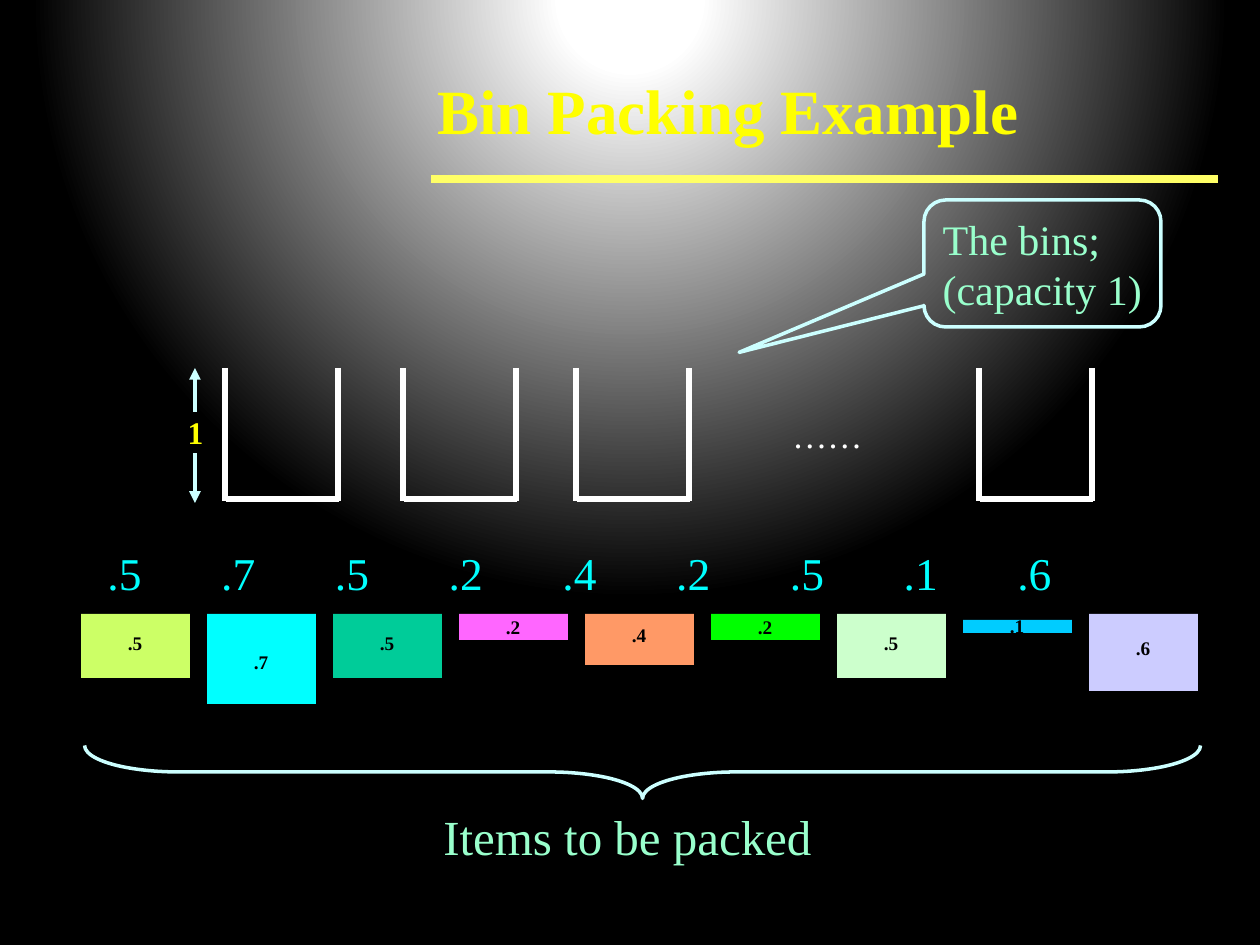
from dataclasses import dataclass

from lxml import etree
from pptx import Presentation
from pptx.dml.color import RGBColor
from pptx.enum.shapes import MSO_CONNECTOR, MSO_SHAPE
from pptx.enum.text import MSO_ANCHOR, PP_ALIGN
from pptx.oxml.ns import qn
from pptx.util import Pt

STRAIGHT = MSO_CONNECTOR.STRAIGHT
RECTANGLE = MSO_SHAPE.RECTANGLE
BRACE = MSO_SHAPE.RIGHT_BRACE
CALLOUT = MSO_SHAPE.ROUNDED_RECTANGULAR_CALLOUT
LEFT, CENTER = PP_ALIGN.LEFT, PP_ALIGN.CENTER
TOP, MIDDLE = MSO_ANCHOR.TOP, MSO_ANCHOR.MIDDLE
EMU_PER_PX = 914400 / 126
TITLE_ONLY = 5


@dataclass(frozen=True)
class Theme:
    font: str = "Times New Roman"
    title: str = "FFFF00"
    rule: str = "FFFF66"
    bin: str = "FFFFFF"
    outline: str = "CCFFFF"
    caption: str = "99FFCC"
    number: str = "00FFFF"
    label: str = "000000"
    glow: tuple = ((0, "FFFFFF"), (9, "FFFFFF"), (76, "000000"), (100, "000000"))
    title_size: int = 36
    caption_size: int = 28
    number_size: int = 26
    callout_size: int = 24
    dots_size: int = 20
    capacity_size: int = 18
    label_size: int = 11


def px(*lengths):
    return [round(length * EMU_PER_PX) for length in lengths]


def write_text(shape, text, *, font, size, color, bold=False, align=LEFT,
               anchor=TOP, wrap=False, spacing=None, tabs=()):
    frame = shape.text_frame
    frame.word_wrap = wrap
    frame.vertical_anchor = anchor
    for index, line in enumerate(text.split("\n")):
        paragraph = frame.add_paragraph() if index else frame.paragraphs[0]
        paragraph.alignment = align
        if spacing:
            paragraph.line_spacing = spacing
        if tabs:
            tab_list = etree.SubElement(paragraph._p.get_or_add_pPr(), qn("a:tabLst"))
            for position in tabs:
                etree.SubElement(tab_list, qn("a:tab"), pos=str(Pt(position)), algn="l")
        run = paragraph.add_run()
        run.text = line
        run.font.name = font
        run.font.size = Pt(size)
        run.font.bold = bold
        run.font.color.rgb = RGBColor.from_string(color)


class SlideBuilder:
    def __init__(self, slide, theme):
        self.slide = slide
        self.theme = theme

    def background(self):
        self.slide.background.fill.gradient()
        gradient = next(self.slide.element.iter(qn("a:gradFill")))
        for child in list(gradient):
            gradient.remove(child)
        stops = etree.SubElement(gradient, qn("a:gsLst"))
        for percent, color in self.theme.glow:
            stop = etree.SubElement(stops, qn("a:gs"), pos=str(percent * 1000))
            etree.SubElement(stop, qn("a:srgbClr"), val=color)
        circle = etree.SubElement(gradient, qn("a:path"), path="circle")
        etree.SubElement(circle, qn("a:fillToRect"), l="50000", t="-80000", r="50000", b="180000")

    def title(self, text, left, top, width, height):
        title = self.slide.shapes.title
        title.left, title.top, title.width, title.height = px(left, top, width, height)
        title.text_frame.margin_top = px(14)[0]
        write_text(title, text, font=self.theme.font, size=self.theme.title_size,
                   color=self.theme.title, bold=True, wrap=True)

    def group(self):
        return self.slide.shapes.add_group_shape().shapes

    def line(self, start, end, color, weight, arrow=False, shapes=None):
        shapes = self.slide.shapes if shapes is None else shapes
        connector = shapes.add_connector(STRAIGHT, *px(*start, *end))
        connector.line.color.rgb = RGBColor.from_string(color)
        connector.line.width = Pt(weight)
        properties = connector.element.spPr
        if arrow:
            etree.SubElement(properties.find(qn("a:ln")), qn("a:headEnd"), type="triangle")
        etree.SubElement(properties, qn("a:effectLst"))

    def text(self, text, left, top, width, height, shapes=None, **style):
        shapes = self.slide.shapes if shapes is None else shapes
        box = shapes.add_textbox(*px(left, top, width, height))
        write_text(box, text, font=self.theme.font, **style)

    def shape(self, kind, left, top, width, height, fill=None, adjustments=(), shapes=None):
        shapes = self.slide.shapes if shapes is None else shapes
        shape = shapes.add_shape(kind, *px(left, top, width, height))
        shape.shadow.inherit = False
        for index, value in enumerate(adjustments):
            shape.adjustments[index] = value
        if fill:
            shape.fill.solid()
            shape.fill.fore_color.rgb = RGBColor.from_string(fill)
            shape.line.fill.background()
        else:
            shape.fill.background()
            shape.line.color.rgb = RGBColor.from_string(self.theme.outline)
            shape.line.width = Pt(2)
        return shape

    def bin(self, left):
        top, bottom, width = 368, 501, 113
        shapes = self.group()
        for start, end in (
            ((left, top), (left, bottom)),
            ((left + 1, bottom - 2), (left + width + 1, bottom - 2)),
            ((left + width, top), (left + width, bottom)),
        ):
            self.line(start, end, self.theme.bin, 3, shapes=shapes)

    def item(self, left, size, color, label_top):
        shapes = self.group()
        top = 620 if size == ".1" else 614
        self.shape(RECTANGLE, left, top, 109, round(128 * float(size)), color, shapes=shapes)
        self.text(size, left + 33, label_top, 42, 31, shapes, size=self.theme.label_size,
                  color=self.theme.label, bold=True, align=CENTER,
                  spacing=0.7 if size == ".1" else 0.8)

    def callout(self, text, left, top, width, height):
        shape = self.shape(CALLOUT, left, top, width, height, adjustments=(-1.28, 0.7, 0.17))
        write_text(shape, text, font=self.theme.font, size=self.theme.callout_size,
                   color=self.theme.caption, anchor=MIDDLE)


def main():
    theme = Theme()
    presentation = Presentation()
    presentation.slide_width, presentation.slide_height = px(1260, 945)
    slide = presentation.slides.add_slide(presentation.slide_layouts[TITLE_ONLY])
    builder = SlideBuilder(slide, theme)

    builder.background()
    builder.line((431, 179), (1218, 179), theme.rule, 4.5)
    builder.title("Bin Packing Example", 425, 58, 835, 132)

    items = (
        (".5", "CCFF66", 630), (".7", "00FFFF", 649), (".5", "00CC99", 630),
        (".2", "FF66FF", 614), (".4", "FF9966", 621), (".2", "00FF00", 614),
        (".5", "CCFFCC", 630), (".1", "00CCFF", 614), (".6", "CCCCFF", 635),
    )
    builder.text("\t".join(size for size, _, _ in items), 95, 539, 979, 68,
                 size=theme.number_size, color=theme.number, wrap=True,
                 tabs=[65 * column for column in range(1, len(items))])

    for left in (225, 403, 576, 979):
        builder.bin(left)
    builder.text("……", 780, 407, 96, 54, size=theme.dots_size, color=theme.bin)

    for tip, end in ((368, 412), (503, 453)):
        builder.line((195, tip), (195, end), theme.outline, 2.25, arrow=True)
    builder.text("1", 174, 407, 43, 50, size=theme.capacity_size,
                 color=theme.title, bold=True, align=CENTER)

    for column, item in enumerate(items):
        builder.item(81 + 126 * column, *item)

    builder.text("Items to be packed", 431, 800, 397, 72,
                 size=theme.caption_size, color=theme.caption)
    brace = builder.shape(BRACE, 616, 214, 53, 1116, adjustments=(1.77, 0.5))
    brace.rotation = 90
    builder.callout("The bins;\n(capacity 1)", 924, 200, 237, 127)

    presentation.save("out.pptx")


if __name__ == "__main__":
    main()
